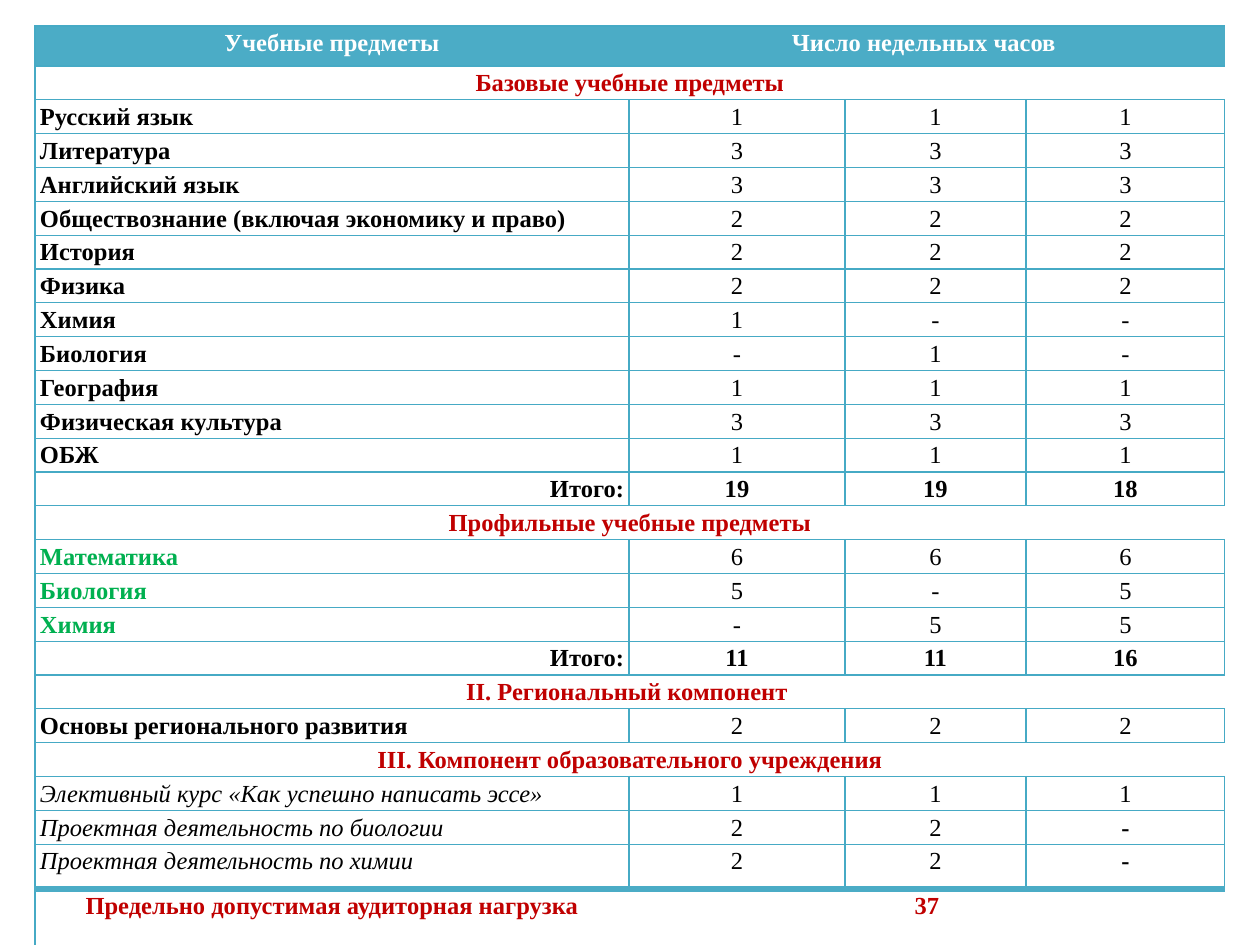
"""Build a slide with a curriculum table of weekly hours per subject."""
from dataclasses import dataclass

from lxml.etree import SubElement
from pptx import Presentation
from pptx.dml.color import RGBColor
from pptx.enum.text import PP_ALIGN as Align
from pptx.oxml.ns import qn
from pptx.table import Table, _Cell as Cell
from pptx.util import Emu, Pt

PX_PER_INCH = 126
WHITE = RGBColor(0xFF, 0xFF, 0xFF)
BLACK = RGBColor(0x00, 0x00, 0x00)
RED = RGBColor(0xC0, 0x00, 0x00)
GREEN = RGBColor(0x00, 0xB0, 0x50)
TEAL = RGBColor(0x4B, 0xAC, 0xC6)
RULE = RGBColor(0x46, 0xAA, 0xC5)

LEFT, TOP, INSET = 35, 26, 5
COLUMNS = (594, 216, 181, 199)
HEADER_HEIGHT, BODY_HEIGHT, BODY_ROWS = 40, 779, 23
LAST_COURSE_HEIGHT, LIMIT_HEIGHT = 45, 57
THIN, THICK = 0.75, 4


@dataclass(frozen=True)
class Style:
    """Look of one cell's text and background."""
    color: RGBColor = BLACK
    bold: bool = True
    italic: bool = False
    align: Align = Align.LEFT
    fill: RGBColor = WHITE


@dataclass(frozen=True)
class Row:
    """Label and values of one table row, with their styles."""
    label: str
    values: tuple[str, ...]
    label_style: Style
    value_style: Style


HEADER = Style(WHITE, align=Align.CENTER, fill=TEAL)
SECTION = Style(RED, align=Align.CENTER)
SUBJECT = Style()
PROFILE = Style(GREEN)
COURSE = Style(bold=False, italic=True)
TOTAL_LABEL = Style(align=Align.RIGHT)
TOTAL_VALUE = Style(align=Align.CENTER)
HOURS = Style(bold=False, align=Align.CENTER)


def section(label: str) -> Row:
    """Return a heading row spanning the table."""
    return Row(label, (), SECTION, SECTION)


def hours(label: str, values: str, style: Style = SUBJECT) -> Row:
    """Return a row of hours given as space-separated values."""
    return Row(label, tuple(values.split()), style, HOURS)


def total(values: str) -> Row:
    """Return a row of totals."""
    return Row("Итого:", tuple(values.split()), TOTAL_LABEL, TOTAL_VALUE)


ROWS = (
    Row("Учебные предметы", ("Число недельных часов ",), HEADER, HEADER),
    section("Базовые учебные предметы"),
    hours("Русский язык", "1 1 1"),
    hours("Литература", "3 3 3"),
    hours("Английский язык", "3 3 3"),
    hours("Обществознание (включая экономику и право)", "2 2 2"),
    hours("История", "2 2 2"),
    hours("Физика", "2 2 2"),
    hours("Химия", "1 - -"),
    hours("Биология", "- 1 -"),
    hours("География", "1 1 1"),
    hours("Физическая культура", "3 3 3"),
    hours("ОБЖ", "1 1 1"),
    total("19 19 18"),
    section("Профильные учебные предметы"),
    hours("Математика", "6 6 6", PROFILE),
    hours("Биология", "5 - 5", PROFILE),
    hours("Химия", "- 5 5", PROFILE),
    total("11 11 16"),
    section("II. Региональный компонент "),
    hours("Основы регионального развития", "2 2 2"),
    section("III. Компонент образовательного учреждения"),
    hours("Элективный курс «Как успешно написать эссе»", "1 1 1", COURSE),
    hours("Проектная деятельность по биологии", "2 2 -", COURSE),
    hours("Проектная деятельность по химии", "2 2 -", COURSE),
    Row("Предельно допустимая аудиторная нагрузка", ("37",), SECTION, SECTION),
)
BOLD_DASH_ROWS = (23, 24)
HEIGHTS = (
    HEADER_HEIGHT,
    *[BODY_HEIGHT / BODY_ROWS] * BODY_ROWS,
    LAST_COURSE_HEIGHT,
    LIMIT_HEIGHT,
)


def px(length: float) -> Emu:
    """Turn pixels into EMU."""
    return Emu(round(length * 914400 / PX_PER_INCH))


def set_borders(cell: Cell, widths: dict[str, float], color: RGBColor) -> None:
    """Draw the cell's sides; a width of zero hides a side."""
    properties = cell._tc.get_or_add_tcPr()
    for side, width in widths.items():
        line = SubElement(properties, qn(f"a:ln{side}"), w=str(Pt(width)))
        if not width:
            SubElement(line, qn("a:noFill"))
            continue
        paint = SubElement(line, qn("a:solidFill"))
        shade = TEAL if width == THICK else color
        SubElement(paint, qn("a:srgbClr"), val=str(shade))


def write_cell(cell: Cell, text: str, style: Style) -> None:
    """Fill the cell and write its styled text."""
    cell.fill.solid()
    cell.fill.fore_color.rgb = style.fill
    margins = {"margin_left": px(INSET), "margin_right": px(INSET),
               "margin_top": 0, "margin_bottom": 0}
    for name, value in margins.items():
        setattr(cell, name, value)
    para = cell.text_frame.paragraphs[0]
    para.alignment = style.align
    para.line_spacing = 1.15
    span = para.add_run()
    span.text = text
    formats = {"name": "Times New Roman", "size": Pt(14),
               "bold": style.bold, "italic": style.italic}
    for name, value in formats.items():
        setattr(span.font, name, value)
    span.font.color.rgb = style.color


def draw_row(table: Table, index: int, row: Row) -> None:
    """Draw one row with its borders, merged cells and text."""
    last_column, last_row = len(COLUMNS) - 1, len(ROWS) - 1
    divided = len(row.values) == last_column
    for column in range(len(COLUMNS)):
        widths = {
            "L": THIN if divided or column == 0 else 0,
            "R": THIN if divided or column == last_column else 0,
            "T": THICK if index == last_row else THIN,
            "B": THICK if index == last_row - 1 else THIN,
        }
        set_borders(table.cell(index, column), widths, RULE)
    if not divided:
        first = len(row.values)
        table.cell(index, first).merge(table.cell(index, last_column))
    write_cell(table.cell(index, 0), row.label, row.label_style)
    for column, value in enumerate(row.values, 1):
        bold_dash = value == "-" and index in BOLD_DASH_ROWS
        style = TOTAL_VALUE if bold_dash else row.value_style
        write_cell(table.cell(index, column), value, style)


def main() -> None:
    """Build and save the deck."""
    deck = Presentation()
    deck.slide_width, deck.slide_height = px(1260), px(945)
    page = deck.slides.add_slide(deck.slide_layouts[6])
    table = page.shapes.add_table(
        len(ROWS), len(COLUMNS), px(LEFT), px(TOP),
        px(sum(COLUMNS)), px(sum(HEIGHTS))).table
    table.first_row = table.horz_banding = False
    for column, width in zip(table.columns, COLUMNS):
        column.width = px(width)
    for line, height in zip(table.rows, HEIGHTS):
        line.height = px(height)
    for index, row in enumerate(ROWS):
        draw_row(table, index, row)
    deck.save("out.pptx")


if __name__ == "__main__":
    main()
